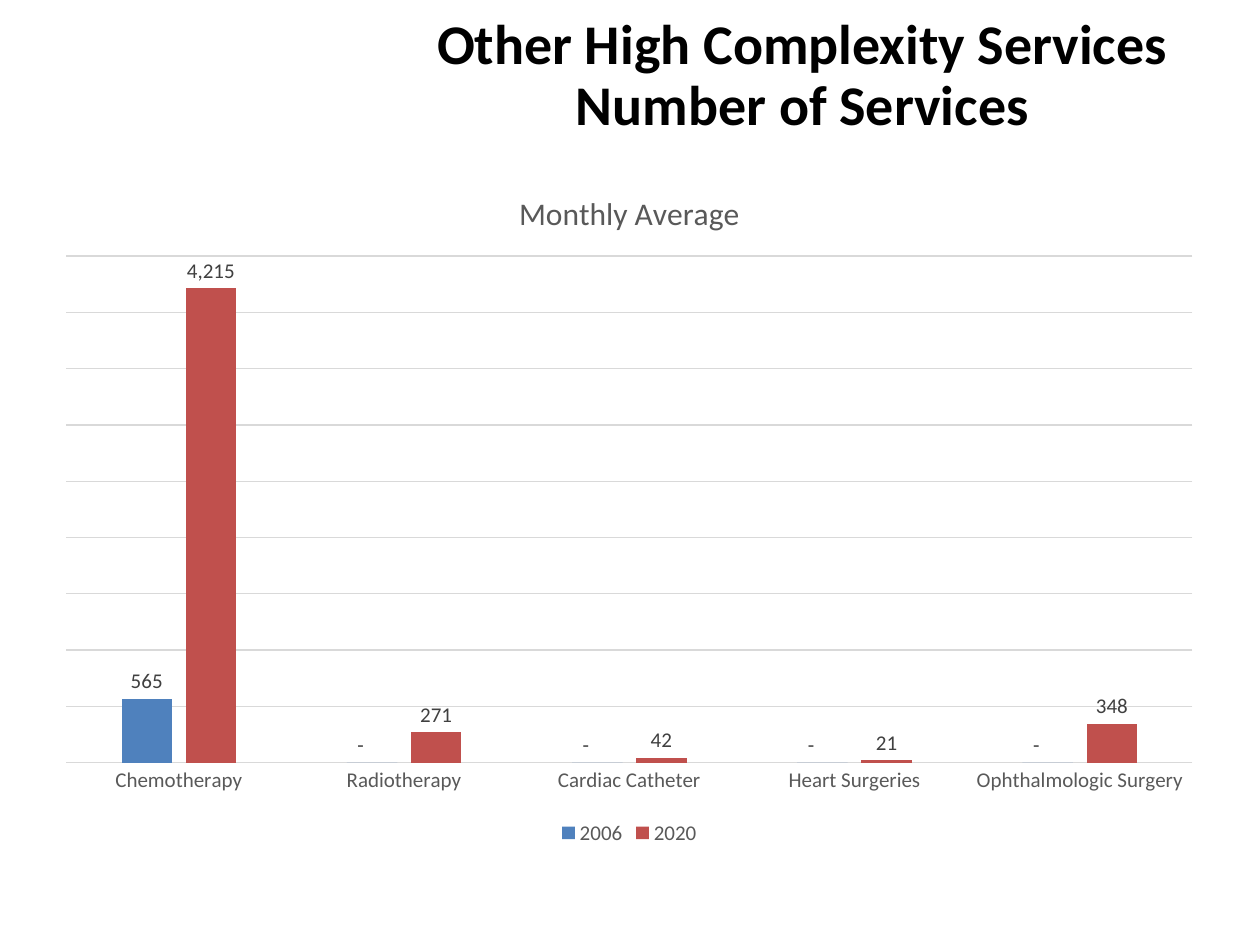
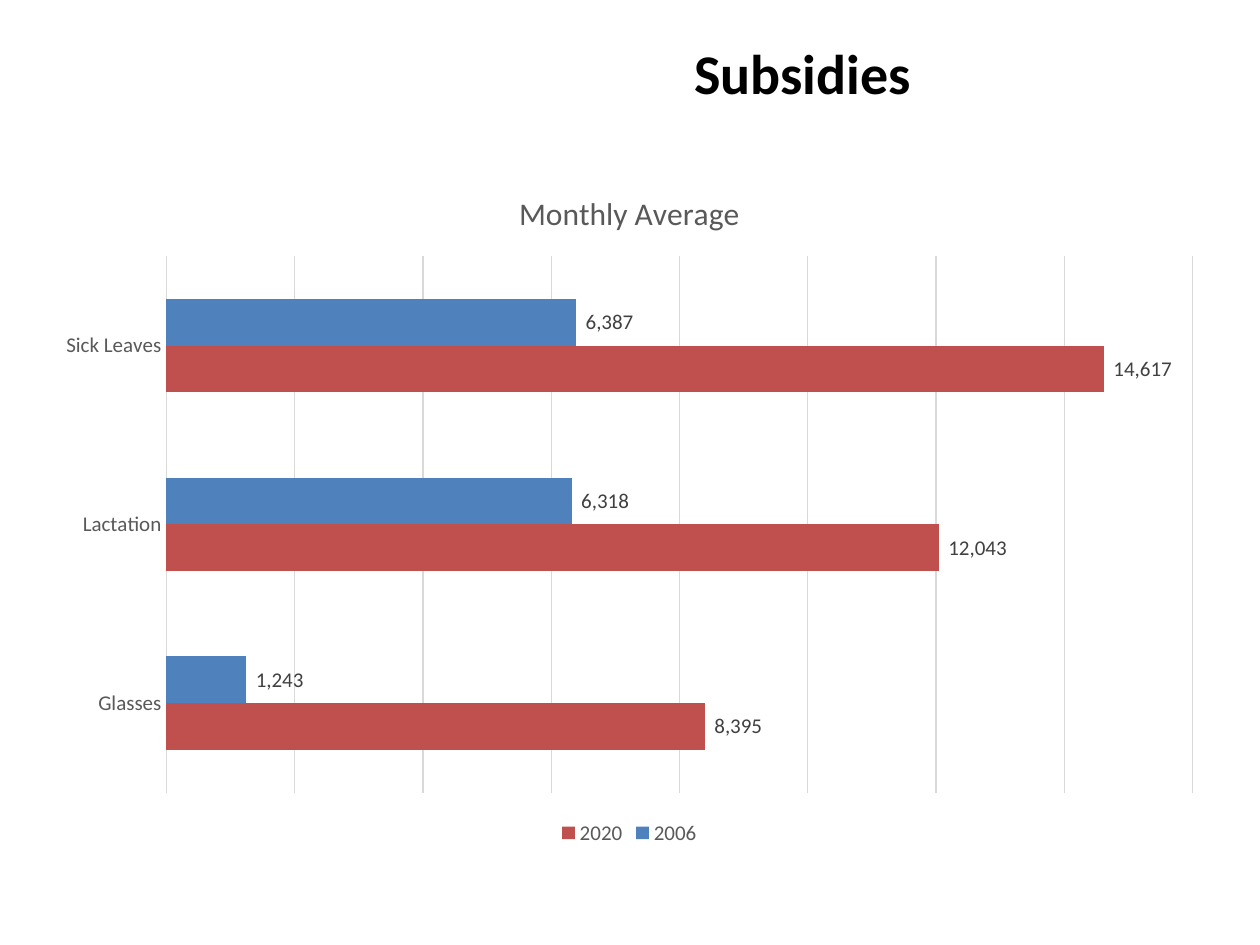
from dataclasses import dataclass

from pptx import Presentation
from pptx.chart.data import CategoryChartData
from pptx.dml.color import RGBColor
from pptx.enum.chart import XL_CHART_TYPE as CT
from pptx.enum.chart import XL_LABEL_POSITION as LABEL
from pptx.enum.chart import XL_LEGEND_POSITION as LEGEND
from pptx.enum.chart import XL_TICK_LABEL_POSITION as TICK_LABEL
from pptx.enum.chart import XL_TICK_MARK as TICK
from pptx.enum.text import MSO_ANCHOR as ANCHOR
from pptx.enum.text import PP_ALIGN as ALIGN
from pptx.util import Pt


@dataclass(frozen=True)
class Theme:
    font: str = "Calibri"
    black: RGBColor = RGBColor(0x00, 0x00, 0x00)
    white: RGBColor = RGBColor(0xFF, 0xFF, 0xFF)
    axis_text: RGBColor = RGBColor(0x59, 0x59, 0x59)
    label_text: RGBColor = RGBColor(0x40, 0x40, 0x40)
    rule: RGBColor = RGBColor(0xD9, 0xD9, 0xD9)
    series: tuple = (RGBColor(0x4F, 0x81, 0xBD), RGBColor(0xC0, 0x50, 0x4D))
    title_size: int = 32
    chart_title_size: int = 18
    chart_text_size: int = 12
    rule_width: float = 0.75


T = Theme()
YEARS = ("2006", "2020")
NUMBER_FORMAT = '_(* #,##0_);_(* \\(#,##0\\);_(* "-"??_);_('
TITLE_BOX = Pt(197.3), Pt(0), Pt(522.7), Pt(87.8)
CHART_BOX = Pt(24.5), Pt(94.3), Pt(670.3), Pt(391.7)

SLIDES = [
    dict(
        title="Other High Complexity Services\nNumber of Services",
        kind=CT.COLUMN_CLUSTERED, gap=219, overlap=-27, reverse=False,
        rows={
            "Chemotherapy": (565, 4215),
            "Radiotherapy": (0, 271),
            "Cardiac Catheter": (0, 42),
            "Heart Surgeries": (0, 21),
            "Ophthalmologic Surgery": (0, 348),
        },
    ),
    dict(
        title="Subsidies",
        kind=CT.BAR_CLUSTERED, gap=182, overlap=0, reverse=True,
        rows={
            "Sick Leaves": (6387, 14617),
            "Lactation": (6318, 12043),
            "Glasses": (1243, 8395),
        },
    ),
]


def set_font(font, size, color, bold=False):
    font.name = T.font
    font.size = Pt(size)
    font.bold = bold
    font.color.rgb = color


def write(tf, text, size, color, bold=False, align=ALIGN.CENTER, spacing=None):
    """Fill the first paragraph of a text frame; newlines become line breaks."""
    p = tf.paragraphs[0]
    p.text = text
    p.alignment = align
    p.line_spacing = spacing
    for r in p.runs:
        set_font(r.font, size, color, bold)


prs = Presentation()
prs.slide_width, prs.slide_height = Pt(720), Pt(540)

for content in SLIDES:
    slide = prs.slides.add_slide(prs.slide_layouts[6])
    slide.background.fill.solid()
    slide.background.fill.fore_color.rgb = T.white

    tf = slide.shapes.add_textbox(*TITLE_BOX).text_frame
    tf.word_wrap = True
    tf.vertical_anchor = ANCHOR.MIDDLE
    write(tf, content["title"], T.title_size, T.black, bold=True, spacing=0.9)

    data = CategoryChartData(number_format=NUMBER_FORMAT)
    data.categories = list(content["rows"])
    for year, values in zip(YEARS, zip(*content["rows"].values())):
        data.add_series(year, values)
    chart = slide.shapes.add_chart(content["kind"], *CHART_BOX, data).chart
    set_font(chart.font, T.chart_text_size, T.axis_text)

    chart.has_title = True
    write(chart.chart_title.text_frame, "Monthly Average",
          T.chart_title_size, T.axis_text)
    chart.chart_title.include_in_layout = False

    chart.has_legend = True
    chart.legend.position = LEGEND.BOTTOM
    chart.legend.include_in_layout = False
    set_font(chart.legend.font, T.chart_text_size, T.axis_text)

    categories, amounts = chart.category_axis, chart.value_axis
    categories.major_tick_mark = categories.minor_tick_mark = TICK.NONE
    categories.tick_label_position = TICK_LABEL.NEXT_TO_AXIS
    categories.reverse_order = content["reverse"]
    set_font(categories.tick_labels.font, T.chart_text_size, T.axis_text)
    amounts.visible = False
    amounts.has_major_gridlines = True
    amounts.tick_labels.number_format = NUMBER_FORMAT
    amounts.tick_labels.number_format_is_linked = False
    for line in (categories.format.line, amounts.major_gridlines.format.line):
        line.width = Pt(T.rule_width)
        line.color.rgb = T.rule

    plot = chart.plots[0]
    plot.vary_by_categories = False
    plot.gap_width = content["gap"]
    plot.overlap = content["overlap"]
    for series, color in zip(plot.series, T.series):
        series.format.fill.solid()
        series.format.fill.fore_color.rgb = color
        series.invert_if_negative = False
        labels = series.data_labels
        labels.show_value = True
        labels.position = LABEL.OUTSIDE_END
        labels.number_format = NUMBER_FORMAT
        labels.number_format_is_linked = False
        set_font(labels.font, T.chart_text_size, T.label_text)

prs.save("out.pptx")
